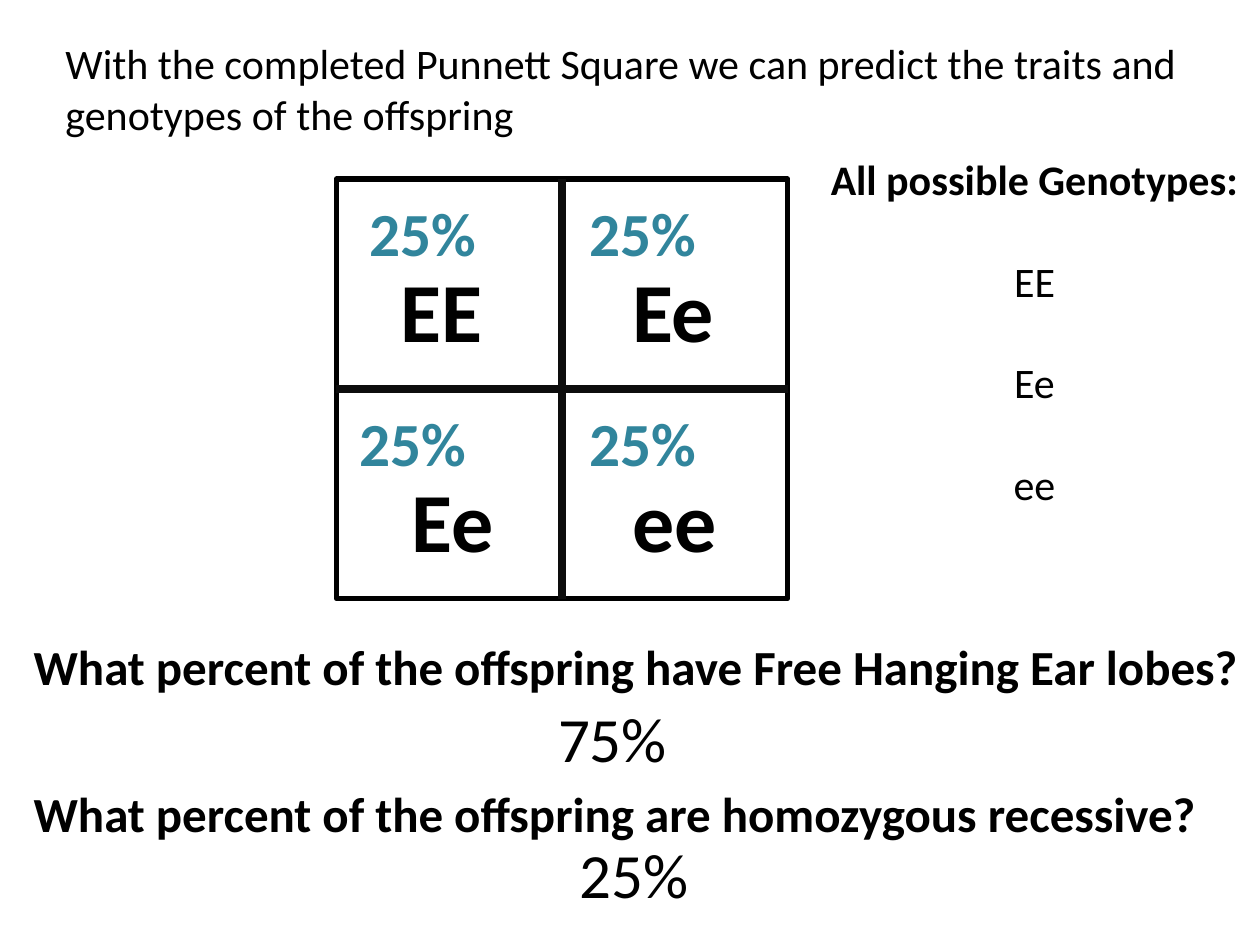
from lxml import etree
from pptx import Presentation
from pptx import util as u
from pptx.dml.color import RGBColor
from pptx.enum import shapes, text
from pptx.oxml.ns import qn

COLORS = {"black": "000000", "divider": "0D0D0D", "teal": "31859C"}

deck = Presentation()
deck.slide_width, deck.slide_height = u.Cm(25.4), u.Cm(19.05)
page = deck.slides.add_slide(deck.slide_layouts[6])


def add_text(left, top, width, height, lines, size, bold=False, color="black"):
    box = page.shapes.add_textbox(u.Cm(left), u.Cm(top), u.Cm(width), u.Cm(height))
    frame = box.text_frame
    frame.word_wrap = True
    frame.auto_size = text.MSO_AUTO_SIZE.SHAPE_TO_FIT_TEXT
    frame.text = lines
    for para in frame.paragraphs:
        for span in para.runs:
            span.font.name = "Calibri"
            span.font.size = u.Pt(size)
            span.font.bold = bold
            span.font.color.rgb = RGBColor.from_string(COLORS[color])
    return frame


left, top, width, height = 6.78, 3.61, 9.1, 8.46
middle_x, middle_y = left + width / 2, top + height / 2

square = page.shapes.add_shape(
    shapes.MSO_SHAPE.RECTANGLE, u.Cm(left), u.Cm(top), u.Cm(width), u.Cm(height)
)
square.shadow.inherit = False
square.fill.background()
square.line.color.rgb = RGBColor.from_string(COLORS["black"])
square.line.width = u.Pt(3)

for x1, y1, x2, y2 in [
    (middle_x, top, middle_x, top + height),
    (left, middle_y, left + width, middle_y),
]:
    divider = page.shapes.add_connector(
        shapes.MSO_CONNECTOR.STRAIGHT, u.Cm(x1), u.Cm(y1), u.Cm(x2), u.Cm(y2)
    )
    divider.line.color.rgb = RGBColor.from_string(COLORS["divider"])
    divider.line.width = u.Pt(4.5)
    etree.SubElement(divider._element.spPr, qn("a:effectLst"))

add_text(
    1.07, 0.64, 25.83, 2.31,
    "With the completed Punnett Square we can predict the traits and genotypes of the offspring",
    24,
)

genotypes = add_text(16.31, 2.97, 9.09, 7.44, "All possible Genotypes:\nEE\nEe\nee", 24)
for index, para in enumerate(genotypes.paragraphs):
    para.alignment = text.PP_ALIGN.CENTER
    para.runs[0].font.bold = index == 0
    para.space_before = u.Pt(29.3 if index else 0)

for genotype, genotype_x, percent_x, cell_y in [
    ("EE", 7.82, 7.19, 3.81),
    ("Ee", 12.5, 11.63, 3.81),
    ("Ee", 8.05, 6.99, 8.05),
    ("ee", 12.5, 11.63, 8.05),
]:
    add_text(genotype_x, cell_y + 1.27, 2.74, 2.31, genotype, 48, True)
    add_text(percent_x, cell_y, 3.61, 1.8, "25%", 35, True, "teal")

for question, question_y, answer, answer_x, answer_y in [
    ("What percent of the offspring have Free Hanging Ear lobes?", 12.7, "75%", 11, 13.97),
    ("What percent of the offspring are homozygous recessive?", 15.67, "25%", 11.43, 16.71),
]:
    add_text(0.43, question_y, 24.97, 1.45, question, 28, True)
    add_text(answer_x, answer_y, 2.97, 1.8, answer, 36)

deck.save("out.pptx")
